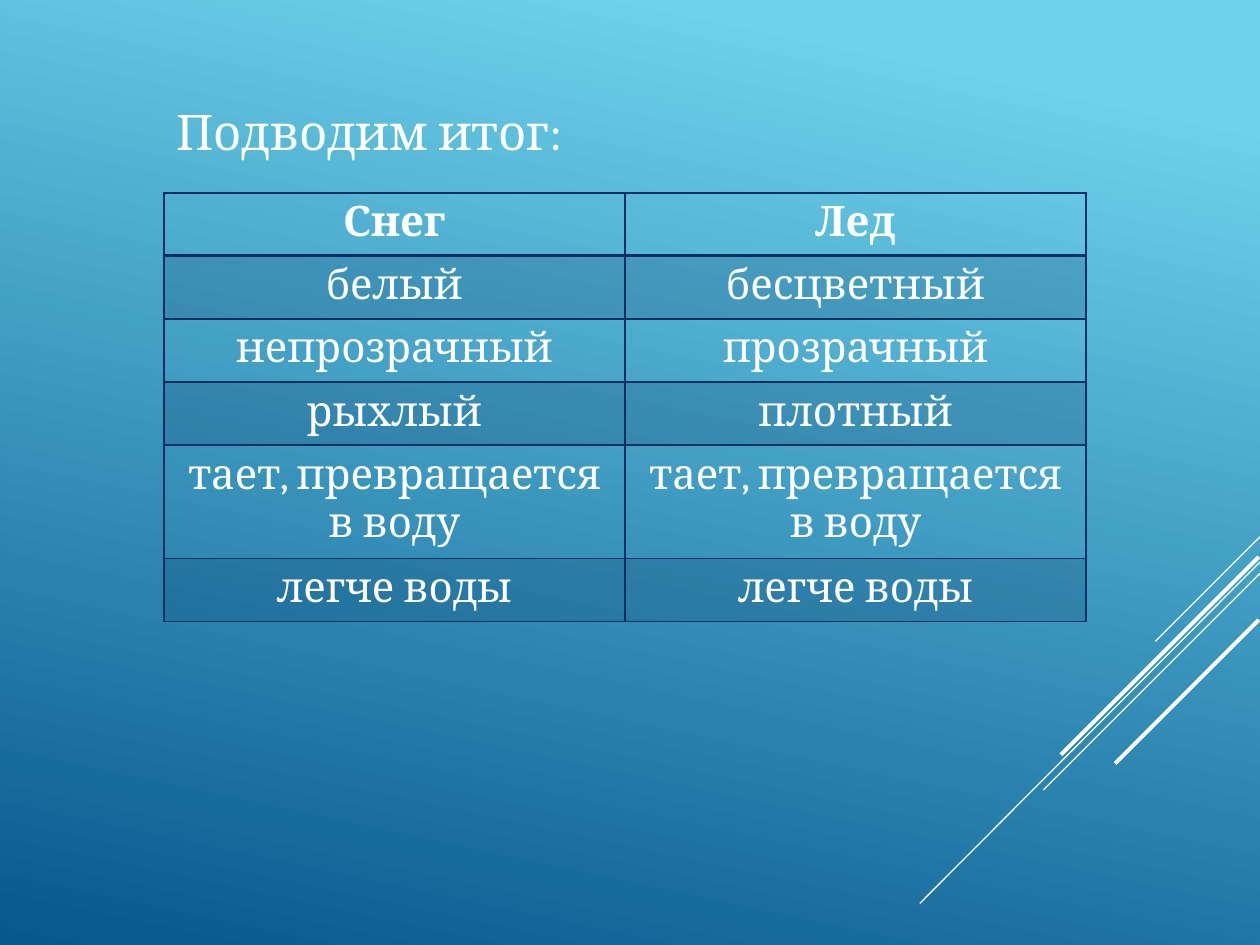
from lxml import etree
from pptx import Presentation
from pptx.dml.color import RGBColor
from pptx.enum import shapes, text
from pptx.oxml import ns
from pptx.util import Inches, Pt

WHITE = RGBColor(0xFF, 0xFF, 0xFF)
NAVY = RGBColor(0x05, 0x2F, 0x61)
SKY = RGBColor(0x6E, 0xD2, 0xEB)
DEEP_BLUE = RGBColor(0x06, 0x58, 0x8E)
FONT = "Cambria"

# start x, start y, end x, end y, width in points
RAYS = [
    (10, 4.26, 9.17, 5.09, 0.75),
    (10, 4.46, 7.3, 7.17, 0.75),
    (10, 4.55, 8.28, 6.27, 0.75),
    (9.99, 4.42, 8.42, 5.99, 2.25),
    (9.99, 4.92, 8.85, 6.06, 2.25),
]

ROWS = [
    ("Снег", "Лед"),
    ("белый", "бесцветный"),
    ("непрозрачный", "прозрачный"),
    ("рыхлый", "плотный"),
    ("тает, превращается в воду", "тает, превращается в воду"),
    ("легче воды", "легче воды"),
]


def add_xml(parent, tag, **attrs):
    return etree.SubElement(parent, ns.qn(tag), attrs)


def set_background(slide):
    fill = slide.background.fill
    fill.gradient()
    fill.gradient_angle = 360 - 102
    for stop, color, position in zip(fill.gradient_stops, (SKY, DEEP_BLUE), (0.1, 1)):
        stop.color.rgb = color
        stop.position = position


def add_ray(slide, x1, y1, x2, y2, width):
    line = slide.shapes.add_connector(
        shapes.MSO_CONNECTOR.STRAIGHT, Inches(x1), Inches(y1), Inches(x2), Inches(y2))
    line.line.color.rgb = WHITE
    line.line.width = Pt(width)
    add_xml(line.element.spPr, "a:effectLst")


def style_text(p, size, bold=False):
    for r in p.runs:
        r.font.name = FONT
        r.font.size = Pt(size)
        r.font.bold = bold
        r.font.color.rgb = WHITE


def add_heading(slide, heading):
    sp = slide.shapes.add_textbox(Inches(1.3), Inches(0.76), Inches(7.64), Inches(0.99))
    tf = sp.text_frame
    tf.word_wrap = True
    tf.text = heading
    style_text(tf.paragraphs[0], 28)


def set_borders(cell, **widths):
    """Draw cell borders; widths are points keyed by side: L, R, T, B."""
    tc_pr = cell._tc.get_or_add_tcPr()
    for side, width in widths.items():
        ln = add_xml(tc_pr, f"a:ln{side}", w=str(Pt(width)))
        add_xml(add_xml(ln, "a:solidFill"), "a:srgbClr", val=str(NAVY))


def set_band(cell, shaded):
    """Tint shaded cells with 20 % navy and leave the others clear."""
    if not shaded:
        cell.fill.background()
        return
    cell.fill.solid()
    cell.fill.fore_color.rgb = NAVY
    color = cell._tc.tcPr.find(ns.qn("a:solidFill")).find(ns.qn("a:srgbClr"))
    add_xml(color, "a:alpha", val="20000")


def add_comparison(slide):
    row_height = Inches(0.41)
    table = slide.shapes.add_table(
        len(ROWS), 2, Inches(1.3), Inches(1.53), Inches(7.32), row_height * len(ROWS)).table
    for i, row in enumerate(ROWS):
        table.rows[i].height = row_height
        for j, words in enumerate(row):
            cell = table.cell(i, j)
            cell.text = words
            p = cell.text_frame.paragraphs[0]
            p.alignment = text.PP_ALIGN.CENTER
            style_text(p, 24, bold=i == 0)
            set_borders(cell, L=1, R=1, T=2 if i == 1 else 1, B=2 if i == 0 else 1)
            set_band(cell, shaded=i % 2 == 1)


def main():
    prs = Presentation()
    prs.slide_width, prs.slide_height = Inches(10), Inches(7.5)
    slide = prs.slides.add_slide(prs.slide_layouts[6])
    set_background(slide)
    for ray in RAYS:
        add_ray(slide, *ray)
    add_heading(slide, "Подводим итог:")
    add_comparison(slide)
    prs.save("out.pptx")


if __name__ == "__main__":
    main()
